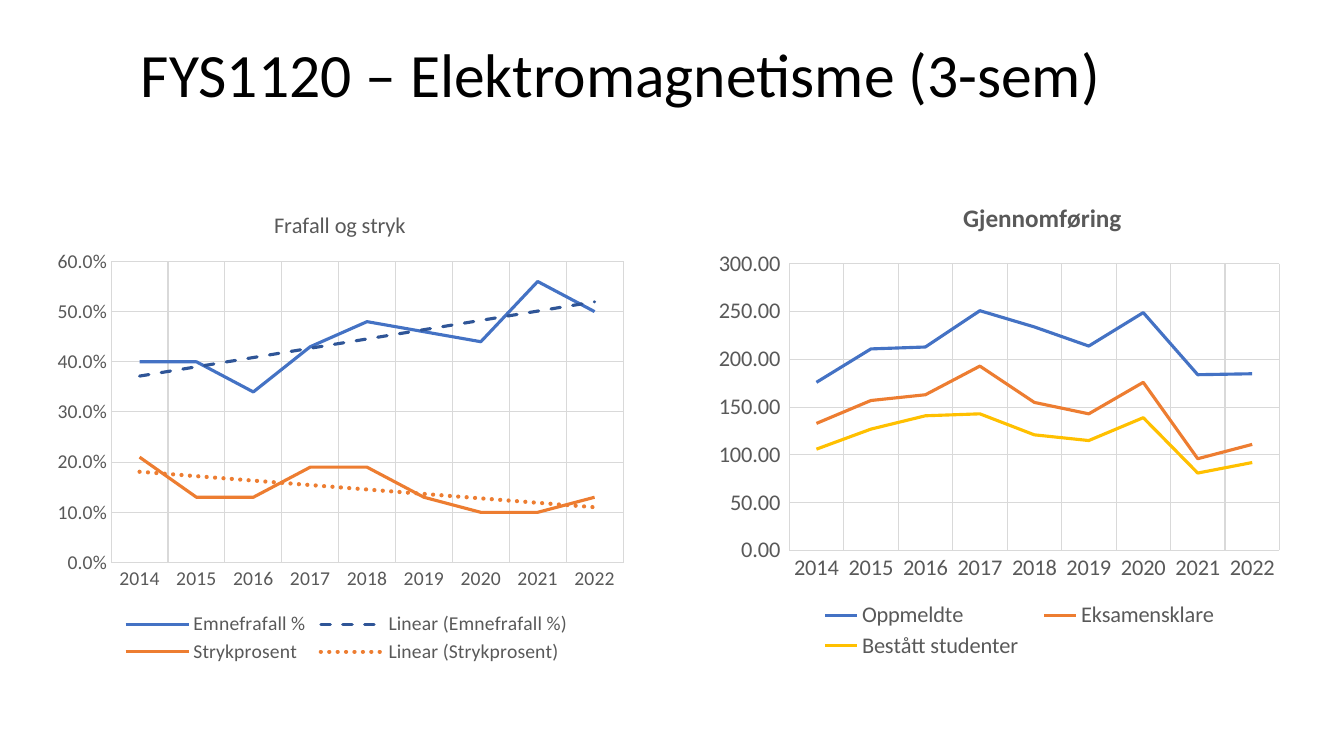
from pptx import Presentation
from pptx.chart.data import CategoryChartData
from pptx.dml.color import RGBColor
from pptx.enum.chart import XL_CHART_TYPE as ChartType, XL_LEGEND_POSITION as LegendPosition
from pptx.enum.chart import XL_TICK_MARK as TickMark
from pptx.oxml import parse_xml
from pptx.oxml.ns import nsdecls, qn
from pptx.util import Cm, Pt

FONT = "Calibri"
GREY, GRID = "595959", "D9D9D9"
BLUE, ORANGE, YELLOW, NAVY = "4472C4", "ED7D31", "FFC000", "2F5597"
YEARS = [str(year) for year in range(2014, 2023)]


def color(value):
    """Turn a hex string into a colour."""
    return RGBColor.from_string(value)


def style_font(font, size, fill, bold=False):
    """Set typeface, size, colour and weight."""
    font.name, font.size, font.bold = FONT, Pt(size), bold
    font.color.rgb = color(fill)


def style_line(line, fill, width):
    """Set the colour and width of a line."""
    line.color.rgb = color(fill)
    line.width = Pt(width)


def place(element, index, **fractions):
    """Give a chart part a fixed layout in fractions of the chart."""
    for layout in element.findall(qn("c:layout")):
        element.remove(layout)
    target = '<c:layoutTarget val="inner"/>' if element.tag == qn("c:plotArea") else ""
    modes = '<c:xMode val="edge"/><c:yMode val="edge"/>'
    sizes = "".join(f'<c:{name} val="{value}"/>' for name, value in fractions.items())
    element.insert(index, parse_xml(
        f'<c:layout {nsdecls("c")}><c:manualLayout>{target}{modes}{sizes}'
        "</c:manualLayout></c:layout>"))


def add_trend(series, fill, width, dash):
    """Add a linear trend line to a series."""
    trend = parse_xml(
        f'<c:trendline {nsdecls("c", "a")}><c:spPr><a:ln w="{Pt(width)}" cap="rnd">'
        f'<a:solidFill><a:srgbClr val="{fill}"/></a:solidFill><a:prstDash val="{dash}"/>'
        '</a:ln></c:spPr><c:trendlineType val="linear"/>'
        '<c:dispRSqr val="0"/><c:dispEq val="0"/></c:trendline>')
    series._element.find(qn("c:cat")).addprevious(trend)


def style_axis(axis, size):
    """Set labels and gridlines of an axis."""
    axis.major_tick_mark = axis.minor_tick_mark = TickMark.NONE
    axis.has_major_gridlines = True
    style_line(axis.major_gridlines.format.line, GRID, 0.75)
    style_font(axis.tick_labels.font, size, GREY)


def add_line_chart(slide, box, series_rows, number_format, top, step, size):
    """Add a styled line chart and return it."""
    data = CategoryChartData(number_format=number_format)
    data.categories = YEARS
    for name, values, _ in series_rows:
        data.add_series(name, values)
    chart = slide.shapes.add_chart(ChartType.LINE, *map(Cm, box), data).chart
    style_font(chart.font, size, "000000")
    plot = chart.plots[0]
    plot.vary_by_categories = False
    for series, (_, _, fill) in zip(plot.series, series_rows):
        series.smooth = False
        style_line(series.format.line, fill, 2.25)
    style_axis(chart.category_axis, size)
    style_line(chart.category_axis.format.line, GRID, 0.75)
    axis = chart.value_axis
    style_axis(axis, size)
    axis.format.line.fill.background()
    axis.minimum_scale, axis.maximum_scale, axis.major_unit = 0, top, step
    axis.tick_labels.number_format = number_format
    axis.tick_labels.number_format_is_linked = False
    chart.has_legend = True
    chart.legend.position = LegendPosition.BOTTOM
    chart.legend.include_in_layout = False
    style_font(chart.legend.font, size, GREY)
    return chart


def add_chart_title(chart, text, size, bold):
    """Write the chart title."""
    chart.has_title = True
    paragraph = chart.chart_title.text_frame.paragraphs[0]
    paragraph.text = text
    style_font(paragraph.font, size, GREY, bold)


def arrange(chart, title, plot, legend):
    """Place title, plot area and legend of a chart."""
    place(chart.chart_title._element, 1, **dict(zip("xy", title)))
    place(chart.plots[0]._element.getparent(), 0, **dict(zip("xywh", plot)))
    place(chart.legend._element, 1, **dict(zip("xywh", legend)))


def add_heading(slide, text):
    """Add the slide heading."""
    frame = slide.shapes.add_textbox(Cm(3.3), Cm(0.79), Cm(25.3), Cm(2.13)).text_frame
    frame.word_wrap = True
    paragraph = frame.paragraphs[0]
    paragraph.text = text
    style_font(paragraph.font, 44, "000000")


def add_completion_chart(slide):
    """Add the chart of student numbers."""
    rows = [
        ("Oppmeldte", (176, 211, 213, 251, 234, 214, 249, 184, 185), BLUE),
        ("Eksamensklare", (133, 157, 163, 193, 155, 143, 176, 96, 111), ORANGE),
        ("Bestått studenter", (106, 127, 141, 143, 121, 115, 139, 81, 92), YELLOW),
    ]
    chart = add_line_chart(slide, (17.83, 4.57, 14.71, 12.24), rows,
                           r"#,##0.00_);\(#,##0.00\)", 300, 50, 16)
    add_chart_title(chart, "Gjennomføring", 18, True)
    arrange(chart, (0.43, 0.03), (0.14, 0.17, 0.84, 0.59), (0.17, 0.86, 0.73, 0.13))


def add_dropout_chart(slide):
    """Add the chart of dropout and failure rates."""
    rows = [
        ("Emnefrafall %", (0.4, 0.4, 0.34, 0.43, 0.48, 0.46, 0.44, 0.56, 0.5), BLUE),
        ("Strykprosent", (0.21, 0.13, 0.13, 0.19, 0.19, 0.13, 0.1, 0.1, 0.13), ORANGE),
    ]
    chart = add_line_chart(slide, (1.17, 4.57, 14.83, 12.24), rows, "0.0%", 0.6, 0.1, 14)
    dropout, failure = chart.plots[0].series
    add_trend(dropout, NAVY, 2.25, "dash")
    add_trend(failure, ORANGE, 3, "sysDot")
    add_chart_title(chart, "Frafall og stryk", 16, False)
    arrange(chart, (0.38, 0.05), (0.11, 0.165, 0.87, 0.62), (0.12, 0.88, 0.78, 0.12))


def main():
    """Build and save the slide."""
    presentation = Presentation()
    presentation.slide_width, presentation.slide_height = Cm(33.87), Cm(19.05)
    slide = presentation.slides.add_slide(presentation.slide_layouts[6])
    add_heading(slide, "FYS1120 – Elektromagnetisme (3-sem)")
    add_completion_chart(slide)
    add_dropout_chart(slide)
    presentation.save("out.pptx")


if __name__ == "__main__":
    main()
